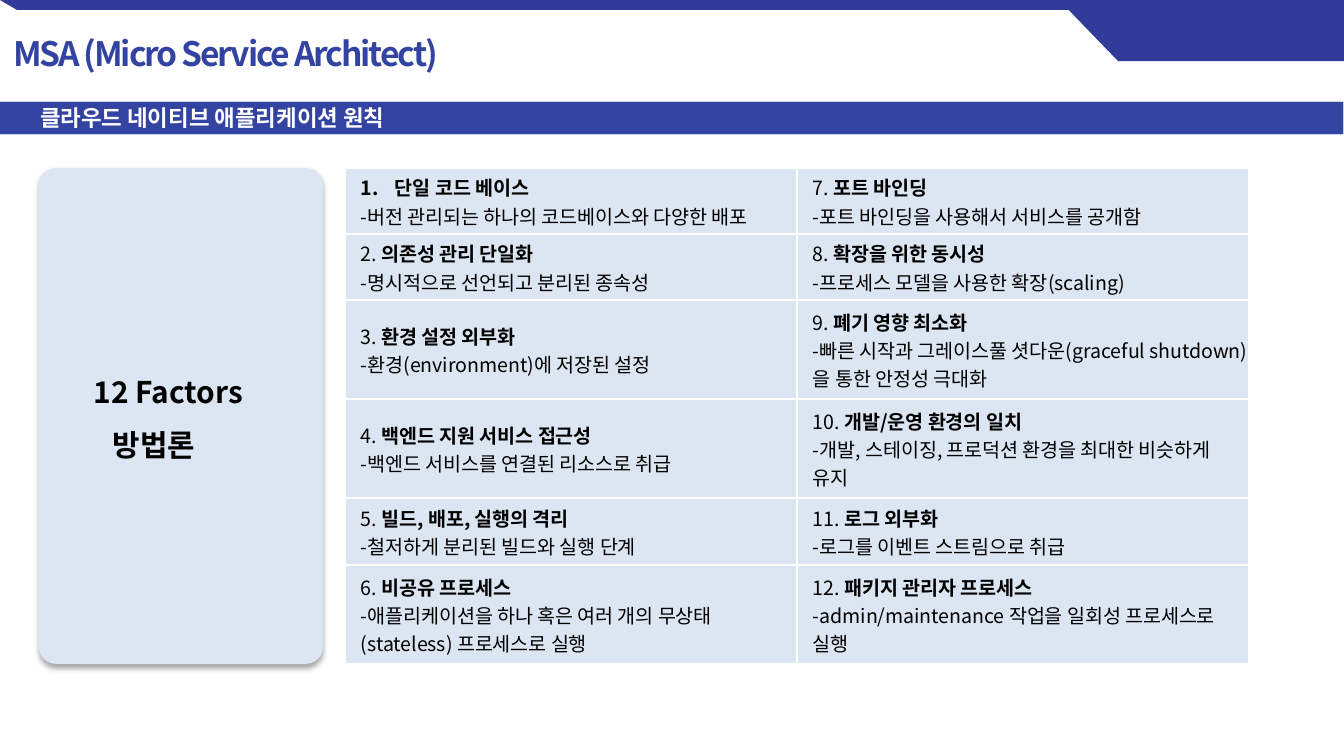
from lxml.etree import SubElement
from pptx import Presentation
from pptx.dml.color import RGBColor
from pptx.enum.shapes import MSO_SHAPE
from pptx.enum.text import MSO_ANCHOR, MSO_AUTO_SIZE, PP_ALIGN
from pptx.oxml import parse_xml
from pptx.oxml.ns import nsdecls, qn
from pptx.util import Emu, Pt

SCALE = 9144000 / 1344
FONT = "Noto Sans CJK KR"
NAVY = RGBColor(0x32, 0x3B, 0x99)
BLUE = RGBColor(0x33, 0x43, 0xA1)
EDGE = RGBColor(0x33, 0x50, 0xA1)
PALE = RGBColor(0xDC, 0xE6, 0xF2)
WHITE = RGBColor(0xFF, 0xFF, 0xFF)
BLACK = RGBColor(0, 0, 0)


def px(length):
    return Emu(round(length * SCALE))


def write(paragraph, text, size=10.5, color=BLACK, bold=False, spacing=None):
    paragraph.alignment = PP_ALIGN.LEFT
    run = paragraph.add_run()
    run.text = text
    run.font.size = Pt(size)
    run.font.bold = bold
    run.font.color.rgb = color
    run.font.name = FONT
    properties = run.font._element
    SubElement(properties, qn("a:ea")).set("typeface", FONT)
    if spacing is not None:
        properties.set("spc", str(spacing))


presentation = Presentation()
presentation.slide_width = px(1344)
presentation.slide_height = px(756)
slide = presentation.slides.add_slide(presentation.slide_layouts[6])
shapes = slide.shapes

top_strip = [(0, 0), (1345, 0), (1345, 10), (17, 10)]
corner_flag = [(1059, 0), (1345, 0), (1345, 61), (1118, 61)]
for points in (top_strip, corner_flag):
    builder = shapes.build_freeform(*points[0], scale=SCALE)
    builder.add_line_segments(points[1:], close=True)
    shape = builder.convert_to_shape()
    shape.shadow.inherit = False
    shape.fill.solid()
    shape.fill.fore_color.rgb = NAVY
    shape.line.fill.background()

banner = shapes.add_shape(MSO_SHAPE.RECTANGLE, 0, px(102), px(1343), px(32))
banner.shadow.inherit = False
banner.fill.solid()
banner.fill.fore_color.rgb = BLUE
banner.line.color.rgb = EDGE
banner.line.width = Pt(0.75)
edge_color = banner.line._ln.find(".//" + qn("a:srgbClr"))
SubElement(edge_color, qn("a:alpha")).set("val", "40000")
frame = banner.text_frame
frame.word_wrap = True
frame.vertical_anchor = MSO_ANCHOR.MIDDLE
frame.margin_left = px(40)
write(frame.paragraphs[0], "클라우드 네이티브 애플리케이션 원칙", size=12, color=WHITE, bold=True)

card = shapes.add_shape(MSO_SHAPE.ROUNDED_RECTANGLE, px(39), px(168), px(284), px(496))
card.adjustments[0] = 0.06
card.fill.solid()
card.fill.fore_color.rgb = PALE
card.line.fill.background()
card._element.spPr.append(parse_xml(
    f'<a:effectLst {nsdecls("a")}>'
    f'<a:outerShdw blurRad="{Pt(3.1)}" dist="{Pt(1.8)}" dir="5400000" rotWithShape="0">'
    '<a:srgbClr val="000000"><a:alpha val="35000"/></a:srgbClr>'
    '</a:outerShdw></a:effectLst>'))

label = shapes.add_textbox(px(88), px(371), px(168), px(169))
frame = label.text_frame
frame.word_wrap = True
frame.margin_left = frame.margin_right = frame.margin_top = frame.margin_bottom = 0
for index, (text, indent) in enumerate([("12 Factors", 6), ("방법론", 25)]):
    paragraph = frame.add_paragraph() if index else frame.paragraphs[0]
    paragraph.line_spacing = 1.07
    paragraph.space_after = Pt(8)
    paragraph._p.get_or_add_pPr().set("marL", str(px(indent)))
    write(paragraph, text, size=16, bold=True)

factors = [
    ("단일 코드 베이스", "버전 관리되는 하나의 코드베이스와 다양한 배포"),
    ("의존성 관리 단일화", "명시적으로 선언되고 분리된 종속성"),
    ("환경 설정 외부화", "환경(environment)에 저장된 설정"),
    ("백엔드 지원 서비스 접근성", "백엔드 서비스를 연결된 리소스로 취급"),
    ("빌드, 배포, 실행의 격리", "철저하게 분리된 빌드와 실행 단계"),
    ("비공유 프로세스", "애플리케이션을 하나 혹은 여러 개의 무상태(stateless) 프로세스로 실행"),
    ("포트 바인딩", "포트 바인딩을 사용해서 서비스를 공개함"),
    ("확장을 위한 동시성", "프로세스 모델을 사용한 확장(scaling)"),
    ("폐기 영향 최소화", "빠른 시작과 그레이스풀 셧다운(graceful shutdown)을 통한 안정성 극대화"),
    ("개발/운영 환경의 일치", "개발, 스테이징, 프로덕션 환경을 최대한 비슷하게 유지"),
    ("로그 외부화", "로그를 이벤트 스트림으로 취급"),
    ("패키지 관리자 프로세스", "admin/maintenance 작업을 일회성 프로세스로 실행"),
]
row_heights = [66, 66, 99, 99, 67, 99]
table = shapes.add_table(6, 2, px(345), px(168), px(904), px(sum(row_heights))).table
table.first_row = False
table.horz_banding = False
for column in table.columns:
    column.width = px(452)
for row, height in zip(table.rows, row_heights):
    row.height = px(height)

for index, (title, detail) in enumerate(factors):
    cell = table.cell(index % 6, index // 6)
    cell.vertical_anchor = MSO_ANCHOR.MIDDLE
    cell.margin_left = px(16)
    cell.margin_right = cell.margin_top = px(1)
    cell.margin_bottom = 0
    for side in ("lnL", "lnR", "lnT", "lnB"):
        cell._tc.get_or_add_tcPr().append(parse_xml(
            f'<a:{side} {nsdecls("a")} w="{Pt(1)}"><a:solidFill>'
            f'<a:srgbClr val="{WHITE}"/></a:solidFill></a:{side}>'))
    cell.fill.solid()
    cell.fill.fore_color.rgb = PALE
    heading = cell.text_frame.paragraphs[0]
    if index == 0:
        properties = heading._p.get_or_add_pPr()
        properties.set("marL", str(px(34)))
        properties.set("indent", str(-px(34)))
        SubElement(properties, qn("a:buFont")).set("typeface", "+mj-lt")
        SubElement(properties, qn("a:buAutoNum")).set("type", "arabicPeriod")
    else:
        write(heading, f"{index + 1}. ")
    write(heading, title, bold=True)
    write(cell.text_frame.add_paragraph(), f"-{detail}")

title_box = shapes.add_textbox(0, px(26), px(454), px(54))
frame = title_box.text_frame
frame.word_wrap = False
frame.auto_size = MSO_AUTO_SIZE.SHAPE_TO_FIT_TEXT
write(frame.paragraphs[0], "MSA (Micro Service Architect)", size=18, color=BLUE, bold=True, spacing=-110)

presentation.save("out.pptx")
